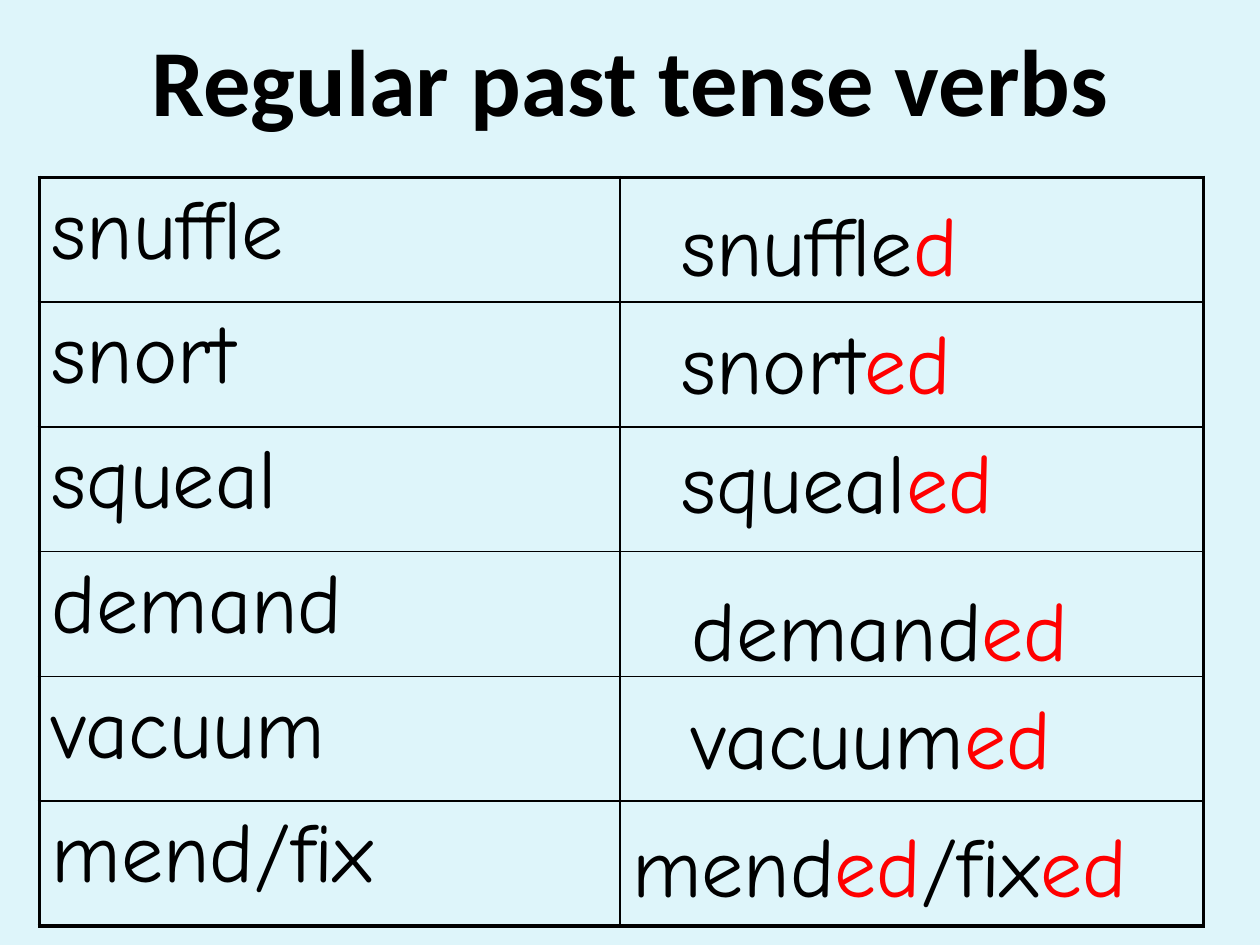
from dataclasses import dataclass

from lxml import etree
from pptx import Presentation
from pptx.dml.color import RGBColor
from pptx.enum.text import MSO_ANCHOR, PP_ALIGN
from pptx.oxml.ns import qn
from pptx.util import Pt

CENTER, LEFT = PP_ALIGN.CENTER, PP_ALIGN.LEFT
MIDDLE, TOP = MSO_ANCHOR.MIDDLE, MSO_ANCHOR.TOP


@dataclass(frozen=True)
class Theme:
    background: str = "DEF5FA"
    ink: str = "000000"
    ending: str = "FF0000"
    title_font: str = "Calibri"
    verb_font: str = "Comic Neue"
    title_size: int = 54
    verb_size: int = 48
    frame: float = 2.25
    rule: float = 1


THEME = Theme()
TITLE = "Regular past tense verbs"
VERBS = ["snuffle", "snort", "squeal", "demand", "vacuum", "mend/fix"]
PAST_TENSES = [
    ([("snuffle", "d")], 382.3, 106.6, 311.8),
    ([("snort", "ed")], 382.3, 174.2, 311.8),
    ([("squeal", "ed")], 382.3, 241.9, 311.8),
    ([("demand", "ed")], 388.1, 326.2, 311.8),
    ([("vacuum", "ed")], 388.1, 388.1, 311.8),
    ([("mend", "ed"), ("/fix", "ed")], 354.2, 461.5, 343.4),
]
SLIDE_W, SLIDE_H, TITLE_H, ANSWER_H = 720, 540, 90, 64.8
TABLE_X, TABLE_Y, ROW_H = 22.5, 101.3, 71.3
COLUMNS = [331.9, 333.4]


def write(tf, runs, font=THEME.verb_font, size=THEME.verb_size,
          bold=False, align=LEFT, anchor=TOP):
    tf.word_wrap = True
    tf.vertical_anchor = anchor
    p = tf.paragraphs[0]
    p.alignment = align
    for text, color in runs:
        r = p.add_run()
        r.text = text
        r.font.name = font
        r.font.size = Pt(size)
        r.font.bold = bold
        r.font.color.rgb = RGBColor.from_string(color)


def add_text(s, box, runs, **style):
    sp = s.shapes.add_textbox(*map(Pt, box))
    write(sp.text_frame, runs, **style)


def set_borders(cell, widths):
    tc_pr = cell._tc.get_or_add_tcPr()
    for index, (side, width) in enumerate(widths.items()):
        line = etree.Element(qn(f"a:ln{side}"), w=str(Pt(width)))
        fill = etree.SubElement(line, qn("a:solidFill"))
        etree.SubElement(fill, qn("a:srgbClr"), val=THEME.ink)
        tc_pr.insert(index, line)


def add_verb_table(s):
    rows, cols = len(VERBS), len(COLUMNS)
    box = (TABLE_X, TABLE_Y, sum(COLUMNS), rows * ROW_H)
    table = s.shapes.add_table(rows, cols, *map(Pt, box)).table
    table.first_row = table.horz_banding = False
    for column, width in zip(table.columns, COLUMNS):
        column.width = Pt(width)
    for i, verb in enumerate(VERBS):
        table.rows[i].height = Pt(ROW_H)
        write(table.cell(i, 0).text_frame, [(verb, THEME.ink)])
        for j in range(cols):
            cell = table.cell(i, j)
            cell.fill.background()
            outer = {"L": j == 0, "R": j == cols - 1,
                     "T": i == 0, "B": i == rows - 1}
            set_borders(cell, {side: THEME.frame if edge else THEME.rule
                               for side, edge in outer.items()})


def main():
    prs = Presentation()
    prs.slide_width, prs.slide_height = Pt(SLIDE_W), Pt(SLIDE_H)
    s = prs.slides.add_slide(prs.slide_layouts[6])
    s.background.fill.solid()
    s.background.fill.fore_color.rgb = RGBColor.from_string(THEME.background)

    add_text(s, (0, 0, SLIDE_W, TITLE_H), [(TITLE, THEME.ink)],
             font=THEME.title_font, size=THEME.title_size, bold=True,
             align=CENTER, anchor=MIDDLE)
    add_verb_table(s)
    for parts, x, y, width in PAST_TENSES:
        runs = [run for stem, ending in parts
                for run in ((stem, THEME.ink), (ending, THEME.ending))]
        add_text(s, (x, y, width, ANSWER_H), runs)
    prs.save("out.pptx")


if __name__ == "__main__":
    main()
